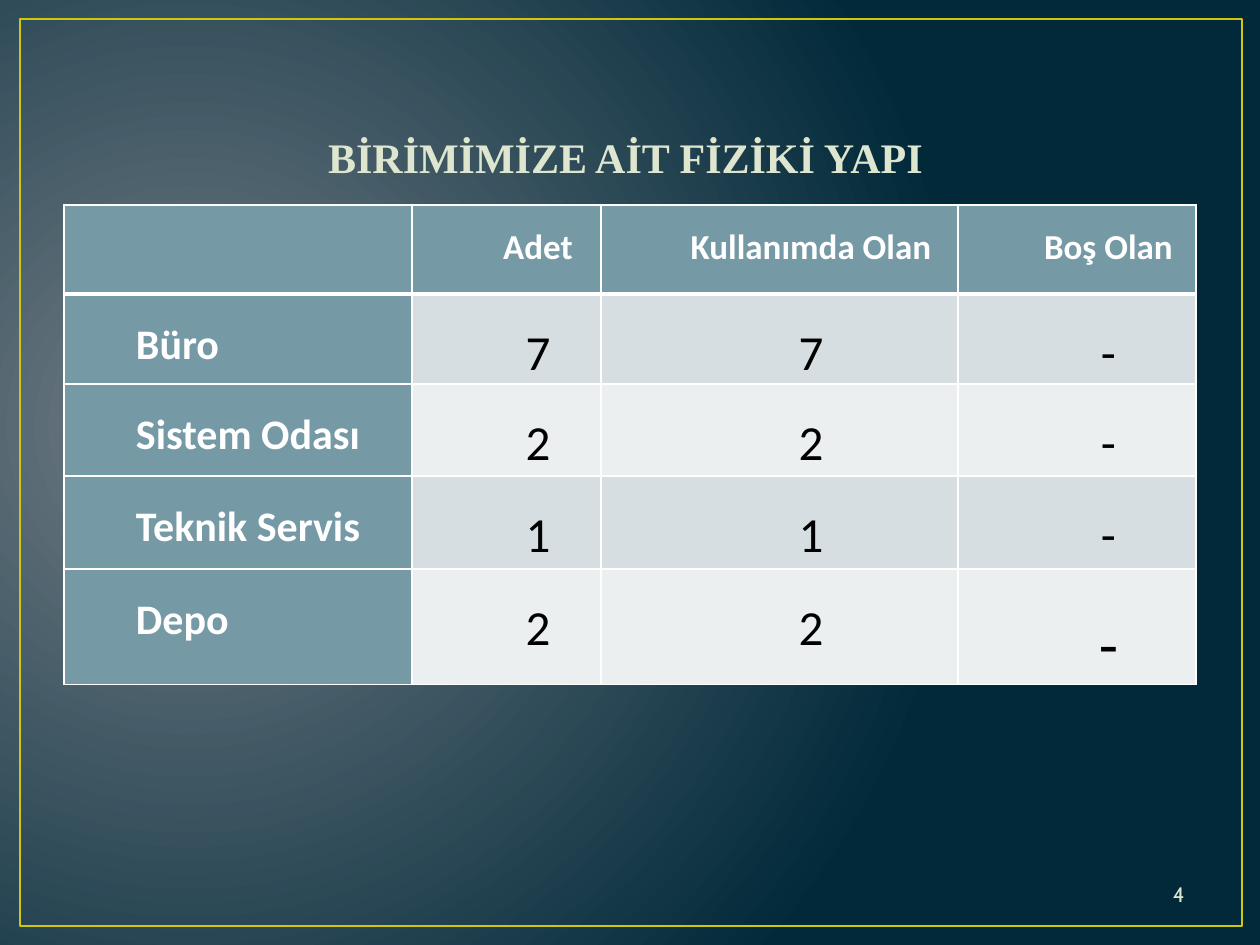
"""Builds the slide with the table of the unit's physical spaces."""
from lxml.etree import SubElement
from pptx import Presentation
from pptx.dml.color import RGBColor
from pptx.enum.shapes import MSO_SHAPE
from pptx.enum.text import MSO_ANCHOR, PP_ALIGN
from pptx.oxml.ns import qn
from pptx.util import Emu, Pt


def px(n):
    return Emu(round(n * 914400 / 126))


def rgb(value):
    return RGBColor.from_string(value)


CREAM, TEAL, WHITE = "DFE6D0", "759AA5", "FFFFFF"
ROWS = [
    ["", "Adet", "Kullanımda Olan", "Boş Olan"],
    ["Büro", "7", "7", "-"],
    ["Sistem Odası", "2", "2", "-"],
    ["Teknik Servis", "1", "1", "-"],
    ["Depo", "2", "2", "-"],
]
COL_WIDTHS = [348, 189, 357, 238]
ROW_HEIGHTS = [89, 90, 92, 93, 115]

prs = Presentation()
prs.slide_width, prs.slide_height = px(1260), px(945)
s = prs.slides.add_slide(prs.slide_layouts[5])

fill = s.background.fill
fill.gradient()
for stop, color, position in zip(fill.gradient_stops, ["717C84", "01293A"], [0, 1]):
    stop.color.rgb = rgb(color)
    stop.position = position
lin = next(s.element.iter(qn("a:lin")))
grad = lin.getparent()
grad.remove(lin)
path = SubElement(grad, qn("a:path"), path="circle")
SubElement(path, qn("a:fillToRect"), l="15000", t="50000", r="85000", b="60000")

frame = s.shapes.add_shape(MSO_SHAPE.RECTANGLE, px(20), px(19), px(1222), px(907))
frame.shadow.inherit = False
frame.fill.background()
frame.line.color.rgb = rgb("CFC60D")
frame.line.width = Pt(1.5)

title = s.shapes.title
title.left, title.top, title.width, title.height = px(54), px(125), px(1143), px(719)
tf = title.text_frame
tf.text = "BİRİMİMİZE AİT FİZİKİ YAPI"
tf.vertical_anchor = MSO_ANCHOR.TOP
p = tf.paragraphs[0]
p.alignment = PP_ALIGN.CENTER
p.space_before = Pt(5)
p.font.name, p.font.size, p.font.bold = "Times New Roman", Pt(24), True
p.font.color.rgb = rgb(CREAM)

table = s.shapes.add_table(len(ROWS), len(COL_WIDTHS), px(64), px(205),
                           px(sum(COL_WIDTHS)), px(sum(ROW_HEIGHTS))).table
for column, width in zip(table.columns, COL_WIDTHS):
    column.width = px(width)
for row, height in zip(table.rows, ROW_HEIGHTS):
    row.height = px(height)

for i, texts in enumerate(ROWS):
    for j, text in enumerate(texts):
        cell = table.cell(i, j)
        heading = i == 0 or j == 0
        cell.margin_left = cell.margin_right = px(9)
        cell.margin_top = cell.margin_bottom = 0
        tcPr = cell._tc.get_or_add_tcPr()
        for side in "LRTB":
            thick = (i, side) in [(0, "B"), (1, "T")]
            ln = SubElement(tcPr, qn(f"a:ln{side}"), w=str(Pt(3 if thick else 1)))
            SubElement(SubElement(ln, qn("a:solidFill")), qn("a:srgbClr"), val=WHITE)
        cell.fill.solid()
        cell.fill.fore_color.rgb = rgb(TEAL if heading else ["ECEFF0", "D6DEE1"][i % 2])
        if not text:
            continue
        cell.text = text
        p = cell.text_frame.paragraphs[0]
        p._p.get_or_add_pPr().set("marL", str(px(63)))
        p.line_spacing = 1.5
        if j > 0:
            p.alignment = PP_ALIGN.CENTER
        else:
            p.alignment = PP_ALIGN.LEFT if text == "Depo" else PP_ALIGN.JUSTIFY
        if j == 3:
            p.space_after = Pt(10)
        size = 20 if i == 0 else 24 if j == 0 else 36 if (i, j) == (4, 3) else 28
        p.font.name, p.font.size, p.font.bold = "Calibri", Pt(size), heading
        p.font.color.rgb = rgb(WHITE if heading else "000000")

number = s.shapes.add_textbox(px(903), px(869), px(294), px(50))
tf = number.text_frame
tf.word_wrap = True
tf.vertical_anchor = MSO_ANCHOR.MIDDLE
p = tf.paragraphs[0]
p.text = "4"
p.alignment = PP_ALIGN.RIGHT
p.font.name, p.font.size = "Cabin", Pt(12)
p.font.color.rgb = rgb(CREAM)

prs.save("out.pptx")
